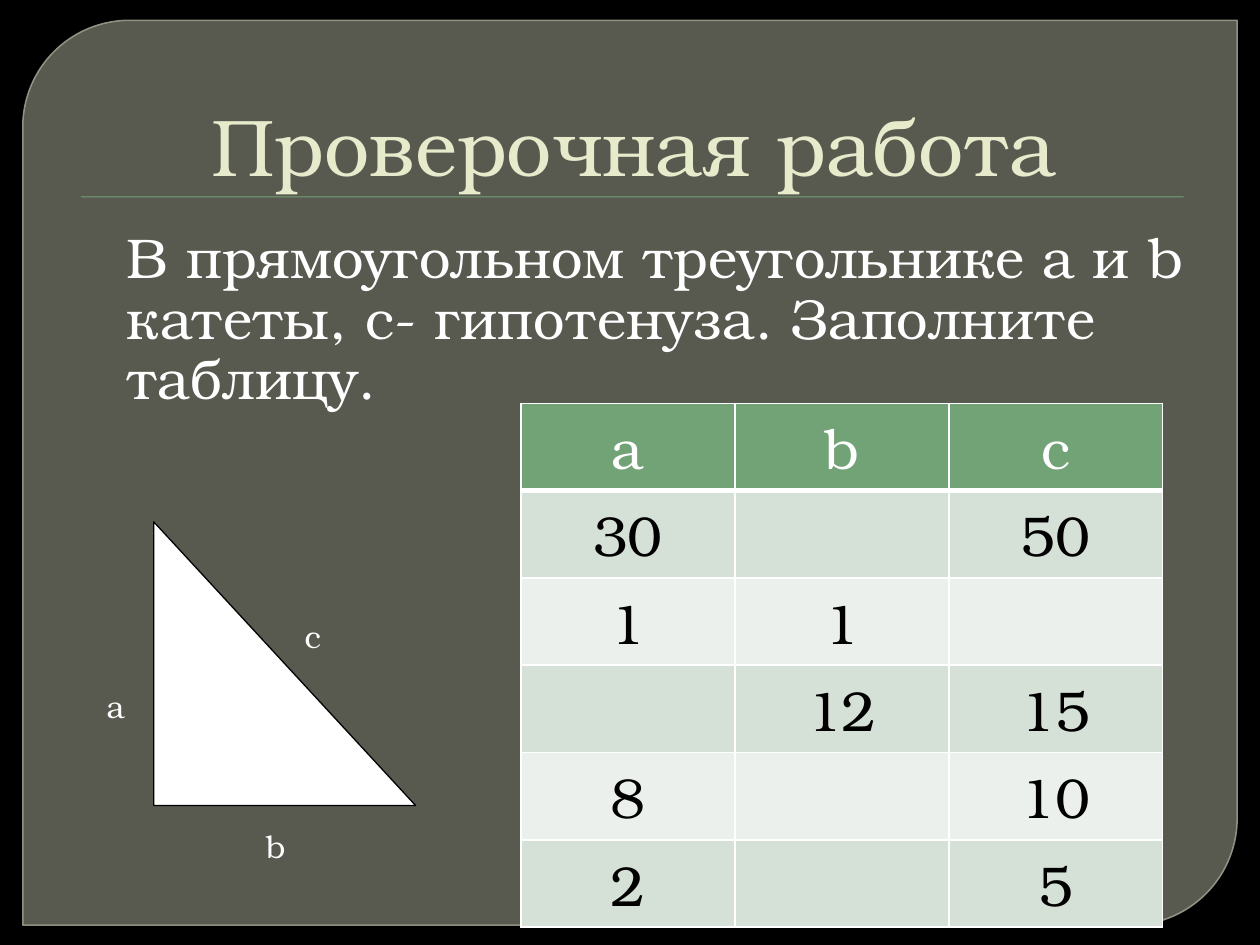
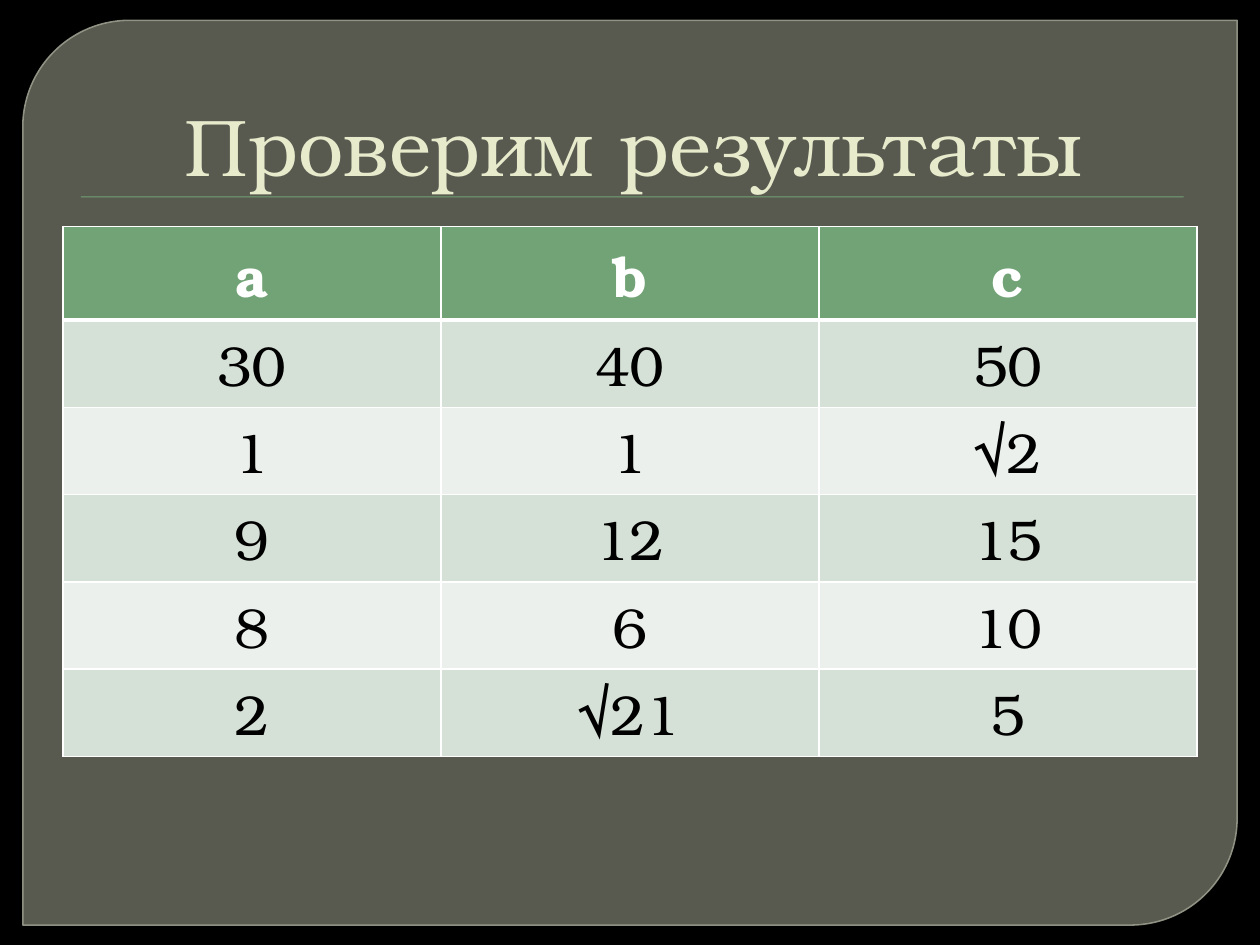
from dataclasses import dataclass

import lxml.etree
import pptx
import pptx.dml.color
import pptx.enum.shapes
import pptx.enum.text
import pptx.oxml.ns
import pptx.util

Cm = pptx.util.Cm
Pt = pptx.util.Pt
SHAPE = pptx.enum.shapes.MSO_SHAPE
ALIGN = pptx.enum.text.PP_ALIGN
ANCHOR = pptx.enum.text.MSO_ANCHOR


@dataclass(frozen=True)
class Theme:
    font: str = "TeX Gyre Bonum"
    black: str = "000000"
    white: str = "FFFFFF"
    panel: str = "888B7B"
    panel_line: str = "9DA090"
    accent: str = "72A376"
    title: str = "E7EACB"
    bands: tuple = ("D5E0D6", "EBF0EC")
    title_size: int = 46
    body_size: int = 32
    label_size: int = 18


THEME = Theme()


def rgb(value):
    return pptx.dml.color.RGBColor.from_string(value)


def add_xml(parent, tag, **attributes):
    return lxml.etree.SubElement(parent, pptx.oxml.ns.qn(tag), attributes)


# Text
def add_run(p, text, size, color, bold=False):
    r = p.add_run()
    r.text = text
    r.font.name = THEME.font
    r.font.size = Pt(size)
    r.font.bold = bold
    r.font.color.rgb = rgb(color)


def add_text(slide, box, text, size, color, wrap=True):
    tf = slide.shapes.add_textbox(*map(Cm, box)).text_frame
    tf.word_wrap = wrap
    add_run(tf.paragraphs[0], text, size, color)
    return tf


def add_title(slide, text):
    tf = add_text(slide, (1.27, 0.71, 22.86, 3.18), text, THEME.title_size, THEME.title)
    tf.vertical_anchor = ANCHOR.BOTTOM
    tf.margin_bottom = 0
    p = tf.paragraphs[0]
    p.alignment = ALIGN.CENTER
    p._p.get_or_add_pPr().set("marL", str(Cm(0.15)))


def add_body(slide, text):
    tf = add_text(slide, (1.5, 4.52, 22.86, 12.57), text, THEME.body_size, THEME.white)
    p = tf.paragraphs[0]
    p.line_spacing = 0.9
    p.space_before = Pt(3)
    p._p.get_or_add_pPr().set("marL", str(Cm(0.81)))


# Shapes
def add_shape(slide, kind, box, fill, line=None, width=0.75):
    s = slide.shapes.add_shape(kind, *map(Cm, box))
    s.shadow.inherit = False
    s.fill.solid()
    s.fill.fore_color.rgb = rgb(fill)
    if line:
        s.line.color.rgb = rgb(line)
        s.line.width = Pt(width)
    else:
        s.line.fill.background()
    return s


def add_frame(slide):
    """Black background, translucent panel and the rule under the title."""
    slide.background.fill.solid()
    slide.background.fill.fore_color.rgb = rgb(THEME.black)

    s = add_shape(slide, SHAPE.ROUND_2_DIAG_RECTANGLE, (0.46, 0.41, 24.48, 18.24),
                  THEME.panel, THEME.panel_line, 0.87)
    s.adjustments[0] = 0.118
    s.adjustments[1] = 0
    colors = s._element.spPr.iter(pptx.oxml.ns.qn("a:srgbClr"))
    for color, opacity in zip(list(colors), (65, 88)):
        add_xml(color, "a:alpha", val=str(opacity * 1000))

    s = add_shape(slide, SHAPE.RECTANGLE, (1.63, 3.96, 22.23, 0.02), THEME.accent)
    effects = s._element.spPr.find(pptx.oxml.ns.qn("a:effectLst"))
    shadow = add_xml(effects, "a:outerShdw", blurRad=str(Pt(1)), dist=str(Pt(1)),
                     dir="5400000", algn="tl", rotWithShape="0")
    color = add_xml(shadow, "a:srgbClr", val=THEME.black)
    add_xml(color, "a:alpha", val="75000")


# Tables
def set_borders(cell, row):
    widths = {"L": 1, "R": 1, "T": 3 if row == 1 else 1, "B": 3 if row == 0 else 1}
    for side, width in widths.items():
        line = add_xml(cell._tc.get_or_add_tcPr(), f"a:ln{side}", w=str(Pt(width)))
        add_xml(add_xml(line, "a:solidFill"), "a:srgbClr", val=THEME.white)


def add_side_table(slide, rows, left, top, width, header_height=1.76, bold_header=False):
    row_height = 1.76
    height = header_height + row_height * (len(rows) - 1)
    table = slide.shapes.add_table(len(rows), len(rows[0]), Cm(left), Cm(top),
                                   Cm(width), Cm(height)).table
    table.first_row = table.horz_banding = False
    for i, values in enumerate(rows):
        header = i == 0
        table.rows[i].height = Cm(header_height if header else row_height)
        for j, value in enumerate(values):
            cell = table.cell(i, j)
            set_borders(cell, i)
            cell.fill.solid()
            cell.fill.fore_color.rgb = rgb(THEME.accent if header else THEME.bands[(i - 1) % 2])
            p = cell.text_frame.paragraphs[0]
            p.alignment = ALIGN.CENTER
            if value:
                add_run(p, value, THEME.body_size, THEME.white if header else THEME.black,
                        header and bold_header)


# Triangle with its side names
def add_triangle(slide):
    add_shape(slide, SHAPE.RIGHT_TRIANGLE, (3.1, 10.52, 5.28, 5.72), THEME.white, THEME.black)
    sides = (("с", 5.89, 12.32, 0.79), ("b", 5.11, 16.54, 0.91), ("a", 1.9, 13.72, 0.99))
    for name, left, top, width in sides:
        add_text(slide, (left, top, width, 1.02), name, THEME.label_size, THEME.white, wrap=False)


def add_slide(prs, title):
    slide = prs.slides.add_slide(prs.slide_layouts[6])
    add_frame(slide)
    add_title(slide, title)
    return slide


def main():
    prs = pptx.Presentation()
    prs.slide_width, prs.slide_height = Cm(25.4), Cm(19.05)

    # Task
    slide = add_slide(prs, "Проверочная работа")
    add_body(slide, "В прямоугольном треугольнике a и b катеты, c- гипотенуза. "
                    "Заполните таблицу.")
    task = (("a", "b", "c"), ("30", "", "50"), ("1", "1", ""),
            ("", "12", "15"), ("8", "", "10"), ("2", "", "5"))
    add_side_table(slide, task, 10.5, 8.13, 12.94)
    add_triangle(slide)

    # Answers
    slide = add_slide(prs, "Проверим результаты")
    answers = (("a", "b", "c"), ("30", "40", "50"), ("1", "1", "√2"),
               ("9", "12", "15"), ("8", "6", "10"), ("2", "√21", "5"))
    add_side_table(slide, answers, 1.27, 4.57, 22.86, header_height=1.88, bold_header=True)

    prs.save("out.pptx")


if __name__ == "__main__":
    main()
